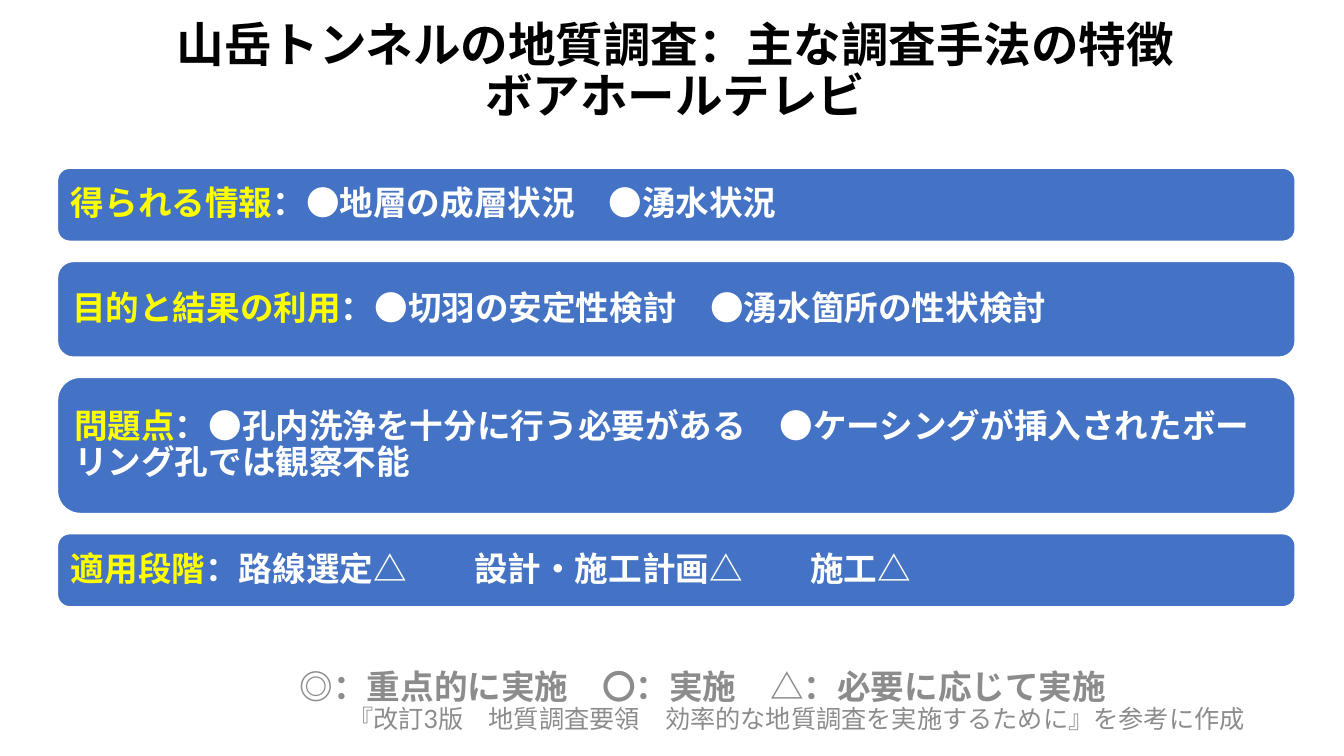
"""Build the borehole television survey slide."""
from typing import NamedTuple

from lxml import etree
from pptx import Presentation
from pptx import util as u
from pptx.dml.color import RGBColor
from pptx.enum import shapes, text
from pptx.oxml import ns

BLACK = RGBColor(0x00, 0x00, 0x00)
WHITE = RGBColor(0xFF, 0xFF, 0xFF)
YELLOW = RGBColor(0xFF, 0xFF, 0x00)
BLUE = RGBColor(0x44, 0x72, 0xC4)
GRAY = RGBColor(0x8C, 0x8C, 0x8C)
LATO = "Lato"
NOTO = "Noto Sans CJK JP"

BAR_LEFT, BAR_TOP, BAR_WIDTH, BAR_GAP = 1.45, 4.24, 31.19, 0.51


class Style(NamedTuple):
    size: int
    color: RGBColor
    bold: bool = True
    font: str = NOTO


class Bar(NamedTuple):
    height: float
    heading: str
    detail: str


class Note(NamedTuple):
    left: float
    top: float
    width: float
    height: float
    runs: list[tuple[str, Style]]


TITLE = Style(34, BLACK, font=LATO)
HEADING = Style(24, YELLOW)
DETAIL = Style(24, WHITE)
LEGEND = Style(24, GRAY)
SOURCE = Style(18, GRAY, False)
SOURCE_LATO = Style(18, GRAY, False, LATO)

TITLE_LINES = ["山岳トンネルの地質調査：主な調査手法の特徴", "ボアホールテレビ"]
BARS = [
    Bar(1.84, "得られる情報", "：●地層の成層状況　●湧水状況"),
    Bar(2.41, "目的と結果の利用", "：●切羽の安定性検討　●湧水箇所の性状検討"),
    Bar(3.43, "問題点", "：●孔内洗浄を十分に行う必要がある　●ケーシングが挿入されたボーリング孔では観察不能"),
    Bar(1.84, "適用段階", "：路線選定△　　設計・施工計画△　　施工△"),
]
NOTES = [
    Note(8.03, 17.53, 24.08, 1.14, [
        ("『改訂", SOURCE),
        ("3", SOURCE_LATO),
        ("版　地質調査", SOURCE),
        ("要領", SOURCE_LATO),
        ("　効率的な地質調査を実施するために』を参考に作成", SOURCE),
    ]),
    Note(2.92, 16.61, 29.59, 1.35, [
        ("◎：重点的に実施　〇：実施　△：必要に応じて実施", LEGEND),
    ]),
]


def add_run(paragraph, content: str, style: Style) -> None:
    """Append one styled run, with its font set for Latin and East Asian text."""
    run = paragraph.add_run()
    run.text = content
    font = run.font
    font.name = style.font
    font.size = u.Pt(style.size)
    font.bold = style.bold
    font.color.rgb = style.color
    east_asian = etree.SubElement(run.font._element, ns.qn("a:ea"))
    east_asian.set("typeface", style.font)


def prepare_frame(shape, alignment: text.PP_ALIGN):
    """Set wrapping and anchoring, and return the first paragraph."""
    frame = shape.text_frame
    frame.word_wrap = True
    frame.auto_size = text.MSO_AUTO_SIZE.NONE
    frame.vertical_anchor = text.MSO_ANCHOR.MIDDLE
    paragraph = frame.paragraphs[0]
    paragraph.alignment = alignment
    return paragraph


def fill_title(title) -> None:
    """Place the title and write its lines."""
    title.left, title.top = u.Cm(0.66), u.Cm(0.74)
    title.width, title.height = u.Cm(32.72), u.Cm(2.18)
    paragraph = prepare_frame(title, text.PP_ALIGN.CENTER)
    paragraph.line_spacing = 0.9
    for index, line in enumerate(TITLE_LINES):
        if index:
            paragraph.add_line_break()
        add_run(paragraph, line, TITLE)


def add_bar(slide, bar: Bar, top: float) -> None:
    """Draw one rounded bar with its heading and detail."""
    shape = slide.shapes.add_shape(
        shapes.MSO_SHAPE.ROUNDED_RECTANGLE,
        u.Cm(BAR_LEFT), u.Cm(top), u.Cm(BAR_WIDTH), u.Cm(bar.height))
    shape.shadow.inherit = False
    shape.fill.solid()
    shape.fill.fore_color.rgb = BLUE
    shape.line.color.rgb = WHITE
    shape.line.width = u.Pt(1)
    paragraph = prepare_frame(shape, text.PP_ALIGN.LEFT)
    paragraph.line_spacing = 0.9
    frame = shape.text_frame
    frame.margin_left = frame.margin_right = u.Cm(0.25)
    frame.margin_top = frame.margin_bottom = u.Cm(0.25)
    add_run(paragraph, bar.heading, HEADING)
    add_run(paragraph, bar.detail, DETAIL)


def add_note(slide, note: Note) -> None:
    """Add one centred note below the bars."""
    box = slide.shapes.add_textbox(
        u.Cm(note.left), u.Cm(note.top), u.Cm(note.width), u.Cm(note.height))
    paragraph = prepare_frame(box, text.PP_ALIGN.CENTER)
    for content, style in note.runs:
        add_run(paragraph, content, style)


def main() -> None:
    """Build and save the slide."""
    presentation = Presentation()
    presentation.slide_width, presentation.slide_height = u.Cm(33.87), u.Cm(19.05)
    slide = presentation.slides.add_slide(presentation.slide_layouts[5])
    fill_title(slide.shapes.title)
    top = BAR_TOP
    for bar in BARS:
        add_bar(slide, bar, top)
        top += bar.height + BAR_GAP
    for note in NOTES:
        add_note(slide, note)


    presentation.save("out.pptx")


if __name__ == "__main__":
    main()
